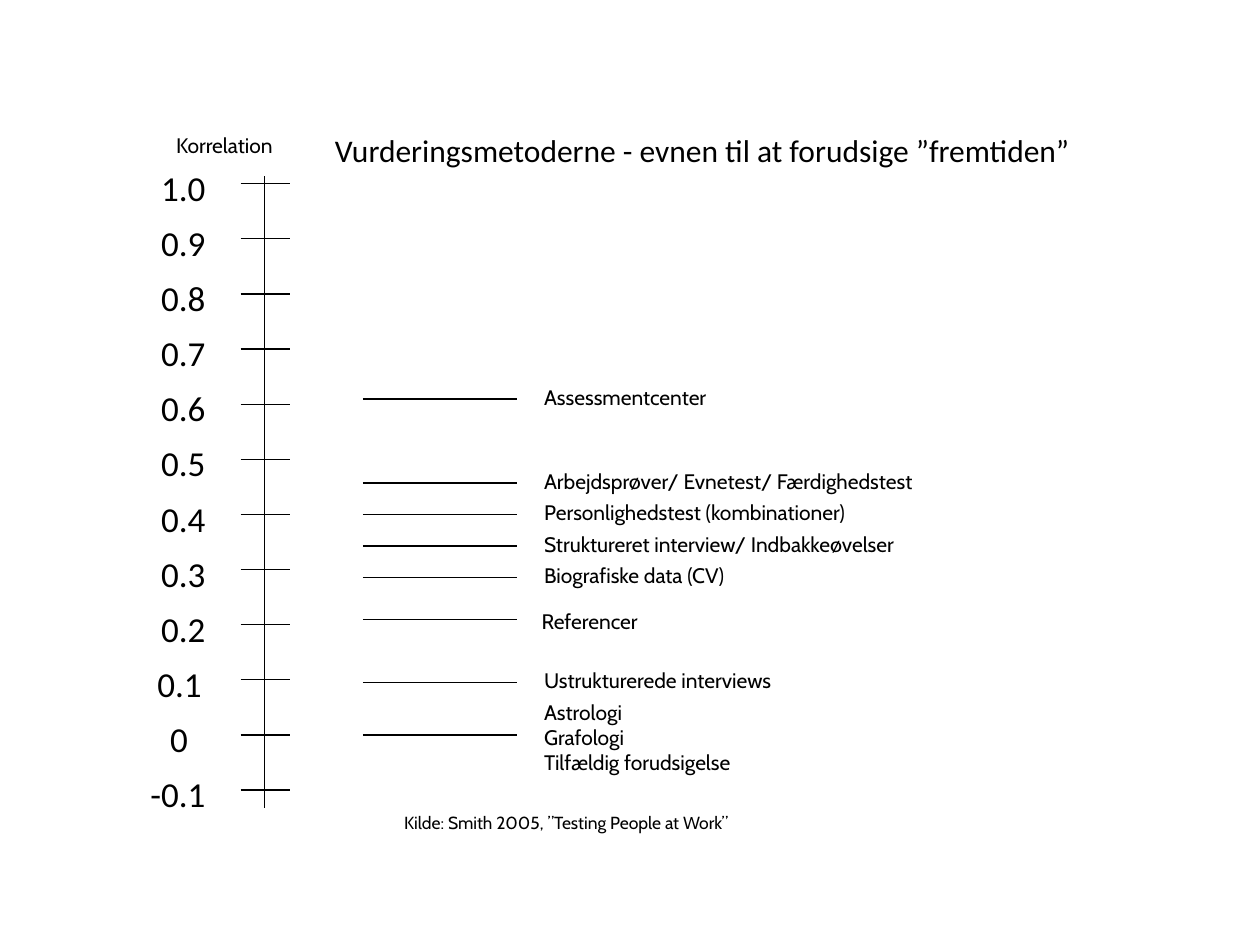
import pptx
import pptx.dml.color
import pptx.enum.shapes
import pptx.enum.text
import pptx.oxml
import pptx.oxml.ns
import pptx.util

BLACK = "000000"
prs = pptx.Presentation()
prs.slide_width = pptx.util.Inches(10)
prs.slide_height = pptx.util.Inches(7.5)
s = prs.slides.add_slide(prs.slide_layouts[6])

# Grid: 100 columns by 90 rows
COL = prs.slide_width / 100
ROW = prs.slide_height / 90


def add_line(x1, y1, x2, y2):
    sp = s.shapes.add_connector(
        pptx.enum.shapes.MSO_CONNECTOR.STRAIGHT,
        int(x1 * COL), int(y1 * ROW), int(x2 * COL), int(y2 * ROW))
    sp.line.color.rgb = pptx.dml.color.RGBColor.from_string(BLACK)
    sp.line.width = pptx.util.Pt(0.75)
    sp._element.spPr.append(pptx.oxml.parse_xml(
        "<a:effectLst %s/>" % pptx.oxml.ns.nsdecls("a")))


def add_text(x, y, w, h, lines, size, font="Cabin", align="LEFT"):
    sp = s.shapes.add_textbox(int(x * COL), int(y * ROW), int(w * COL), int(h * ROW))
    tf = sp.text_frame
    tf.word_wrap = True
    tf.text = "\n".join(lines)
    for p in tf.paragraphs:
        p.alignment = pptx.enum.text.PP_ALIGN[align]
        p.font.size = pptx.util.Pt(size)
        p.font.name = font
        p.font.color.rgb = pptx.dml.color.RGBColor.from_string(BLACK)


# Title, axis name and source
add_text(25.6, 11.9, 62, 4.8, ["Vurderingsmetoderne - evnen til at forudsige ”fremtiden”"], 18, "Calibri")
add_text(13, 12, 10, 3.6, ["Korrelation"], 12)
add_text(31.1, 76.7, 32, 3.2, ["Kilde: Smith 2005, ”Testing People at Work”"], 10)

# Correlation axis: ticks and right-aligned labels
add_line(21, 16.8, 21, 77)
labels = ["1.0", "0.9", "0.8", "0.7", "0.6", "0.5", "0.4", "0.3", "0.2", "0.1", "0", "-0.1"]
shift = {"0.1": -0.3, "0": -1.4}
for i, label in enumerate(labels):
    y = 17.5 + 5.25 * i
    add_line(19.1, y, 23, y)
    add_text(10.3 + shift.get(label, 0), y - 2.25, 7, 4.6, [label], 20, "Calibri", "RIGHT")

# Methods: row of the line, left and top of the text, wording
methods = [
    (38, 42.2, 36, ["Assessmentcenter"]),
    (46, 42.2, 44, ["Arbejdsprøver/ Evnetest/ Færdighedstest"]),
    (49, 42.2, 47, ["Personlighedstest (kombinationer)"]),
    (52, 42.2, 50, ["Struktureret interview/ Indbakkeøvelser"]),
    (55, 42.2, 53, ["Biografiske data (CV)"]),
    (59, 42, 57.4, ["Referencer"]),
    (65, 42.2, 63, ["Ustrukturerede interviews"]),
    (70, 42.2, 66, ["Astrologi", "Grafologi", "Tilfældig forudsigelse"]),
]
for y, left, top, lines in methods:
    add_line(28.8, y, 41, y)
    add_text(left, top, 34, 1.2 + 2.4 * len(lines), lines, 12)

prs.save("out.pptx")
